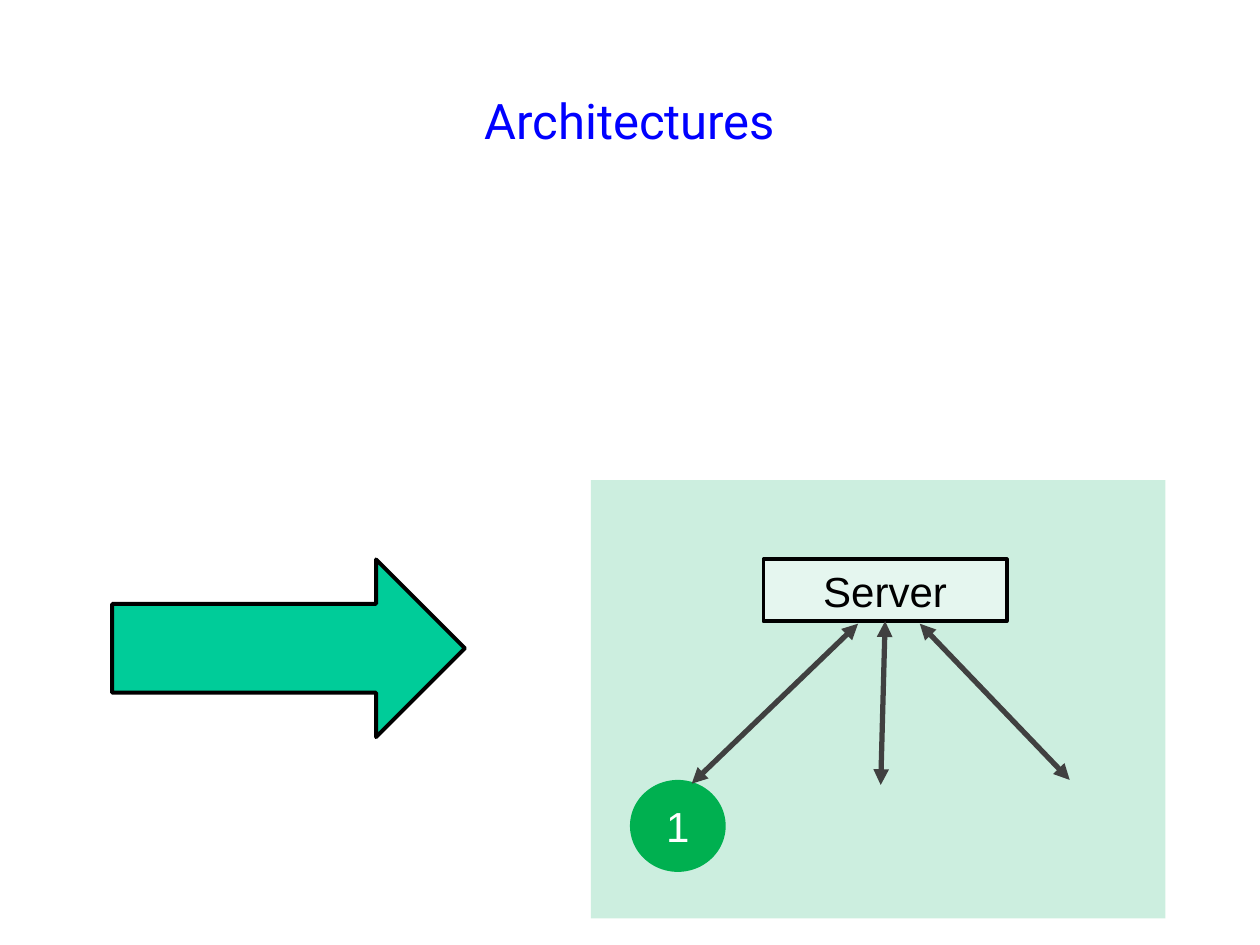
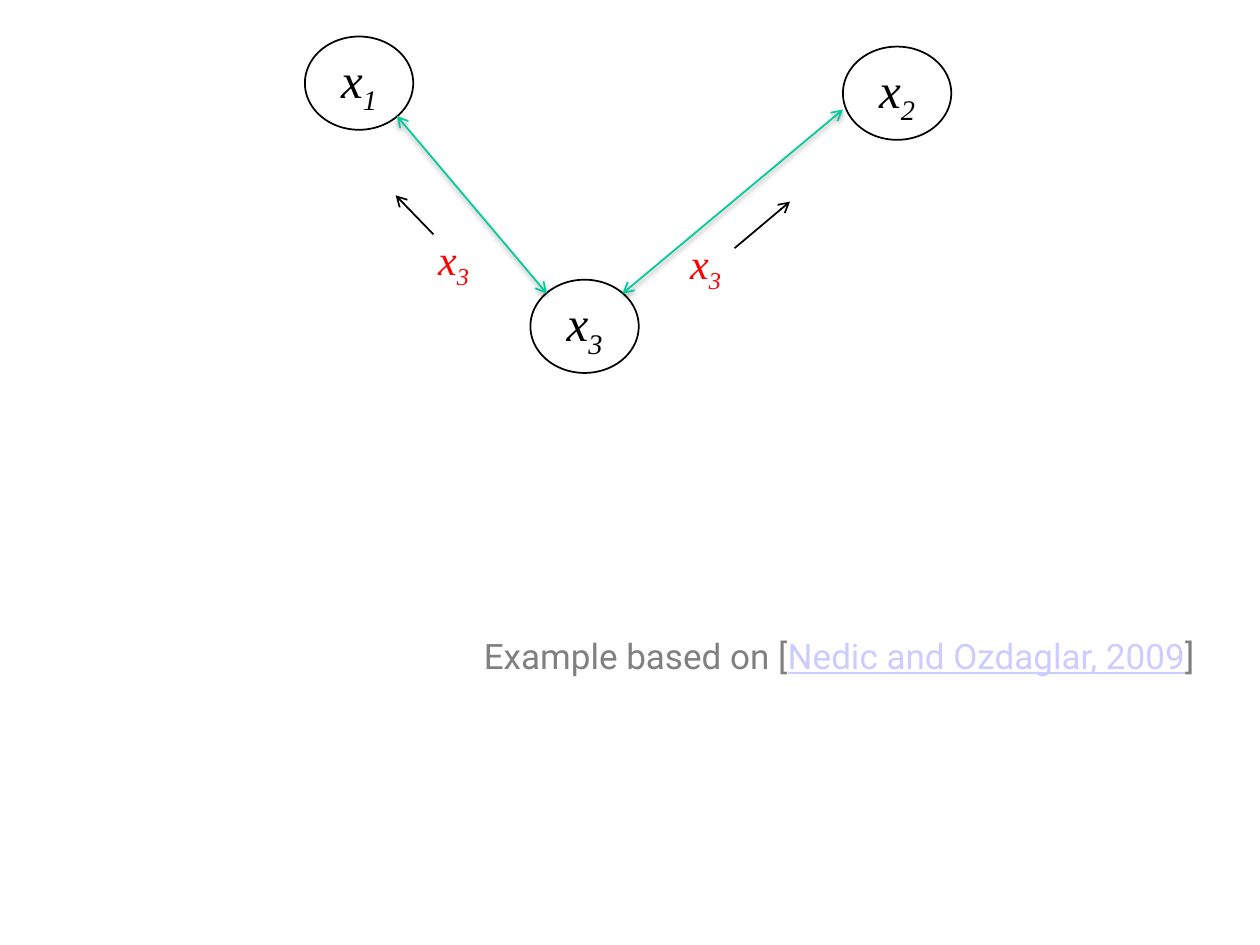
from lxml import etree
from pptx import Presentation
from pptx.dml.color import RGBColor
from pptx.enum.shapes import MSO_CONNECTOR, MSO_SHAPE
from pptx.enum.text import MSO_ANCHOR, PP_ALIGN
from pptx.oxml.ns import qn
from pptx.util import Inches, Pt

LINE = MSO_CONNECTOR.STRAIGHT
RECT, OVAL, ARROW = MSO_SHAPE.RECTANGLE, MSO_SHAPE.OVAL, MSO_SHAPE.RIGHT_ARROW
MID, CENTER = MSO_ANCHOR.MIDDLE, PP_ALIGN.CENTER

WIDE, HIGH = Inches(10), Inches(7.5)
COLS, ROWS = 100, 75
BLACK, WHITE, TEAL, GRAY = "000000", "FFFFFF", "00CC99", "404040"

TITLE = {"name": "Roboto", "size": Pt(28), "color": "0000FF"}
NOTE = {"name": "Roboto", "size": Pt(20), "color": "808080"}
LINK = {**NOTE, "color": "CCCCFF", "underline": True}
PLAIN = {"name": "Arial", "size": Pt(24), "color": BLACK}
MATH = {"name": "Times New Roman", "size": Pt(28), "color": BLACK, "italic": True}
LABEL = {**MATH, "size": Pt(24), "color": "FF0000"}


def paint(hue):
    return RGBColor.from_string(hue)


def place(left, top, *size):
    units = (WIDE / COLS, HIGH / ROWS) * 2
    return [round(part * unit) for part, unit in zip((left, top, *size), units)]


def node(root, tag, **attrs):
    item = etree.SubElement(root, qn(tag))
    for key, val in attrs.items():
        item.set(key, str(val))
    return item


def write(shape, runs):
    frame = shape.text_frame
    frame.word_wrap = False
    frame.vertical_anchor = MID
    para = frame.paragraphs[0]
    para.alignment = CENTER
    for text, style, base in runs:
        run = para.add_run()
        run.text = text
        for key, val in style.items():
            if key == "color":
                run.font.color.rgb = paint(val)
            else:
                setattr(run.font, key, val)
        if base:
            run.font._element.set("baseline", str(base))


def note(slide, box, runs):
    write(slide.shapes.add_textbox(*place(*box)), runs)


def block(slide, kind, box, fill, line=None, runs=(), alpha=None):
    shape = slide.shapes.add_shape(kind, *place(*box))
    shape.shadow.inherit = False
    shape.fill.solid()
    shape.fill.fore_color.rgb = paint(fill)
    if alpha:
        color = shape._element.spPr.find(qn("a:solidFill"))[0]
        node(color, "a:alpha", val=alpha * 1000)
    if line:
        shape.line.color.rgb = paint(BLACK)
        shape.line.width = Pt(line)
    else:
        shape.line.fill.background()
    write(shape, runs)
    return shape


def link(slide, start, end, hue, width, tip, both=True, shade=False):
    wire = slide.shapes.add_connector(LINE, *place(*start), *place(*end))
    wire.line.color.rgb = paint(hue)
    wire.line.width = Pt(width)
    pen = wire.line._get_or_add_ln()
    if both:
        node(pen, "a:headEnd", type=tip)
    node(pen, "a:tailEnd", type=tip)
    glow = node(wire._element.spPr, "a:effectLst")
    if shade:
        cast = node(glow, "a:outerShdw", blurRad=Pt(3.1), dist=Pt(1.6),
                    dir=90 * 60000, rotWithShape=0)
        node(node(cast, "a:srgbClr", val=BLACK), "a:alpha", val=38000)
    return wire


def index(digit, style):
    return [("x", style, 0), (digit, style, -25000)]


def server_slide(slide):
    block(slide, RECT, (46.9, 38.1, 45.6, 34.8), "CCEEDF")
    note(slide, (7.5, 3.3, 85, 12.5), [("Architectures", TITLE, 0)])
    block(slide, OVAL, (50, 61.9, 7.6, 7.3), "00B050",
          runs=[("1", {**PLAIN, "color": WHITE}, 0)])
    server = block(slide, RECT, (60.6, 44.4, 19.3, 4.9), WHITE, 2.25,
                   [("Server", PLAIN, 0)], alpha=50)
    for start, end in (((68.1, 49.5), (54.9, 62.2)), ((73, 49.5), (84.9, 61.9))):
        link(slide, start, end, GRAY, 3, "triangle")
    stem = link(slide, (70, 49.5), (69.9, 62.3), GRAY, 3, "triangle")
    stem.begin_connect(server, 2)
    block(slide, ARROW, (8.9, 44.4, 28, 14.1), TEAL, 2.25)


def network_slide(slide):
    note(slide, (37.4, 49.9, 58.4, 4.3), [
        ("Example based on [", NOTE, 0),
        ("Nedic and Ozdaglar, 2009", LINK, 0),
        ("]", NOTE, 0)])
    for digit, left, top in (("1", 24.2, 2.9), ("3", 42.1, 22.2), ("2", 66.9, 3.7)):
        block(slide, OVAL, (left, top, 8.6, 7.4), WHITE, 1, index(digit, MATH))
    for start, end in (((31.5, 9.2), (43.4, 23.3)), ((49.4, 23.3), (66.9, 8.7))):
        link(slide, start, end, TEAL, 1, "arrow", shade=True)
    for start, end in (((58.3, 19.7), (62.7, 16)), ((34.4, 18.6), (31.4, 15.5))):
        link(slide, start, end, BLACK, 1, "arrow", both=False)
    for left, top in ((33.7, 18.3), (53.7, 18.6)):
        note(slide, (left, top, 4.6, 5), index("3", LABEL))


def main():
    deck = Presentation()
    deck.slide_width, deck.slide_height = WIDE, HIGH
    for draw in (server_slide, network_slide):
        draw(deck.slides.add_slide(deck.slide_layouts[6]))
    deck.save("out.pptx")


if __name__ == "__main__":
    main()
